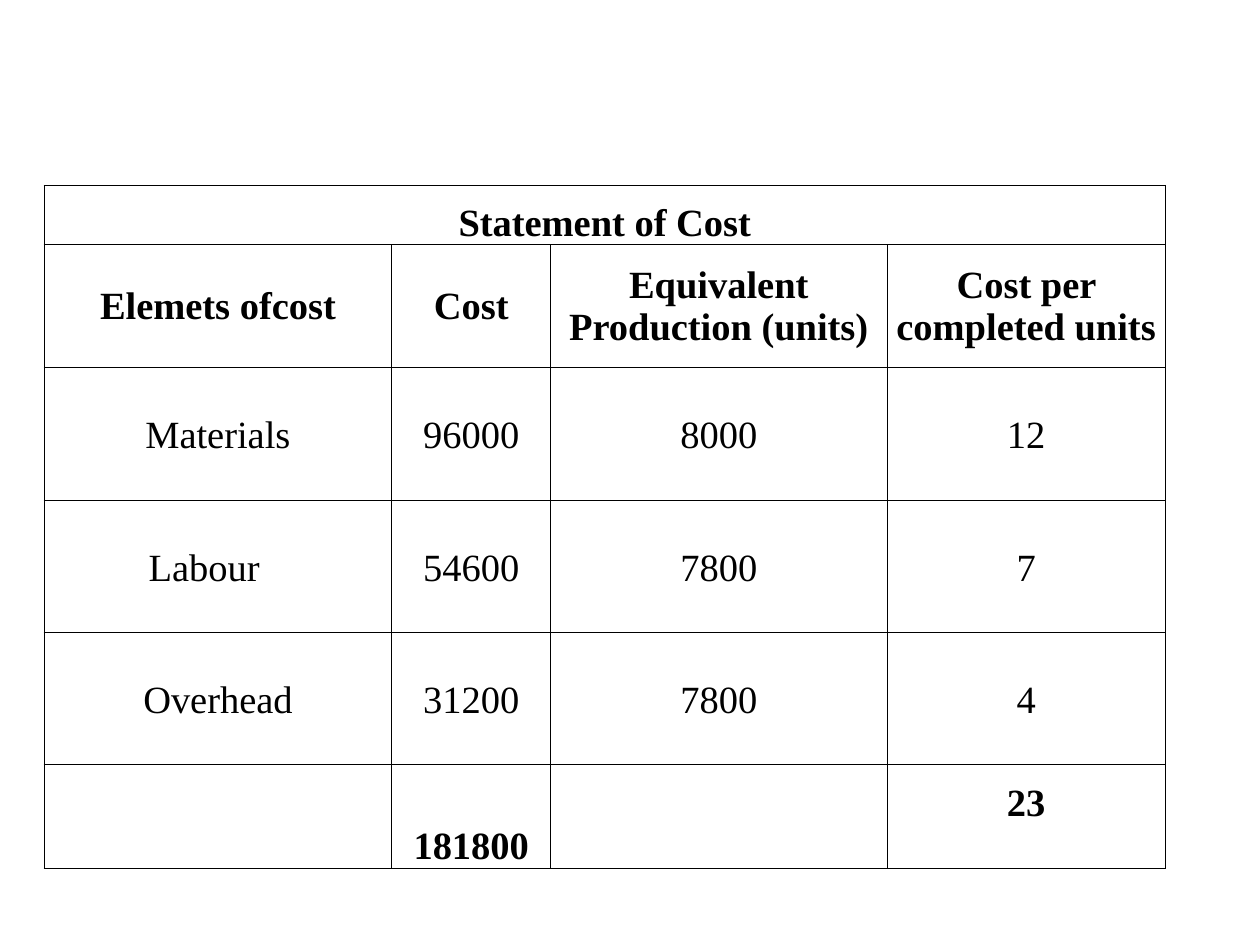
from dataclasses import dataclass

from lxml.etree import SubElement
from pptx import Presentation
from pptx.dml.color import RGBColor
from pptx.enum.text import MSO_ANCHOR, PP_ALIGN
from pptx.oxml.ns import qn
from pptx.util import Inches, Pt

COLUMN_WIDTHS = [2.76, 1.26, 2.67, 2.21]
LINE_HEIGHT = 0.34
INSET = 0.01
INK, PAPER = "000000", "FFFFFF"


@dataclass
class Entry:
    text: str
    bottom: float = 0
    right: float = INSET


@dataclass
class TableRow:
    height: float
    entries: list
    bold: bool = False
    anchor: MSO_ANCHOR = MSO_ANCHOR.BOTTOM


def body_row(label, cost, units, rate, label_right=INSET):
    entries = [Entry(text, LINE_HEIGHT) for text in (label, cost, units, rate)]
    entries[0].right = label_right
    return TableRow(1.05, entries)


ROWS = [
    TableRow(0.47, [Entry("Statement of Cost"), Entry(""), Entry(""), Entry("")], bold=True),
    TableRow(0.98, [Entry("Elemets ofcost"), Entry("Cost"),
                    Entry("Equivalent Production (units)"),
                    Entry("Cost per completed units")],
             bold=True, anchor=MSO_ANCHOR.MIDDLE),
    body_row("Materials", "96000", "8000", "12"),
    body_row("Labour", "54600", "7800", "7", label_right=0.23),
    body_row("Overhead", "31200", "7800", "4"),
    TableRow(0.82, [Entry(""), Entry("181800"), Entry(""), Entry("23", LINE_HEIGHT)],
             bold=True),
]


def color(value):
    return RGBColor.from_string(value)


def add_borders(cell, value, points):
    properties = cell._tc.get_or_add_tcPr()
    for position, side in enumerate(("lnL", "lnR", "lnT", "lnB")):
        line = SubElement(properties, qn(f"a:{side}"), w=str(Pt(points)))
        fill = SubElement(line, qn("a:solidFill"))
        SubElement(fill, qn("a:srgbClr"), val=value)
        properties.insert(position, line)


def format_cell(cell, entry, bold, anchor):
    cell.fill.solid()
    cell.fill.fore_color.rgb = color(PAPER)
    add_borders(cell, INK, 0.5)
    cell.margin_left = cell.margin_top = Inches(INSET)
    cell.margin_right = Inches(entry.right)
    cell.margin_bottom = Inches(entry.bottom)
    cell.vertical_anchor = anchor
    cell.text = entry.text
    paragraph = cell.text_frame.paragraphs[0]
    paragraph.alignment = PP_ALIGN.CENTER
    font = paragraph.font
    font.name = "Times New Roman"
    font.size = Pt(22)
    font.bold = bold
    font.color.rgb = color(INK)


def add_cost_table(slide, left, top):
    frame = slide.shapes.add_table(
        len(ROWS), len(COLUMN_WIDTHS), Inches(left), Inches(top),
        Inches(sum(COLUMN_WIDTHS)), Inches(sum(row.height for row in ROWS)))
    table = frame.table
    table.first_row = table.horz_banding = False
    for column, width in zip(table.columns, COLUMN_WIDTHS):
        column.width = Inches(width)
    for table_row, row in zip(table.rows, ROWS):
        table_row.height = Inches(row.height)
        for cell, entry in zip(table_row.cells, row.entries):
            format_cell(cell, entry, row.bold, row.anchor)
    table.cell(0, 0).merge(table.cell(0, len(COLUMN_WIDTHS) - 1))


def main():
    presentation = Presentation()
    presentation.slide_width = Inches(10)
    presentation.slide_height = Inches(7.5)
    slide = presentation.slides.add_slide(presentation.slide_layouts[6])
    add_cost_table(slide, 0.35, 1.47)
    presentation.save("out.pptx")


if __name__ == "__main__":
    main()
